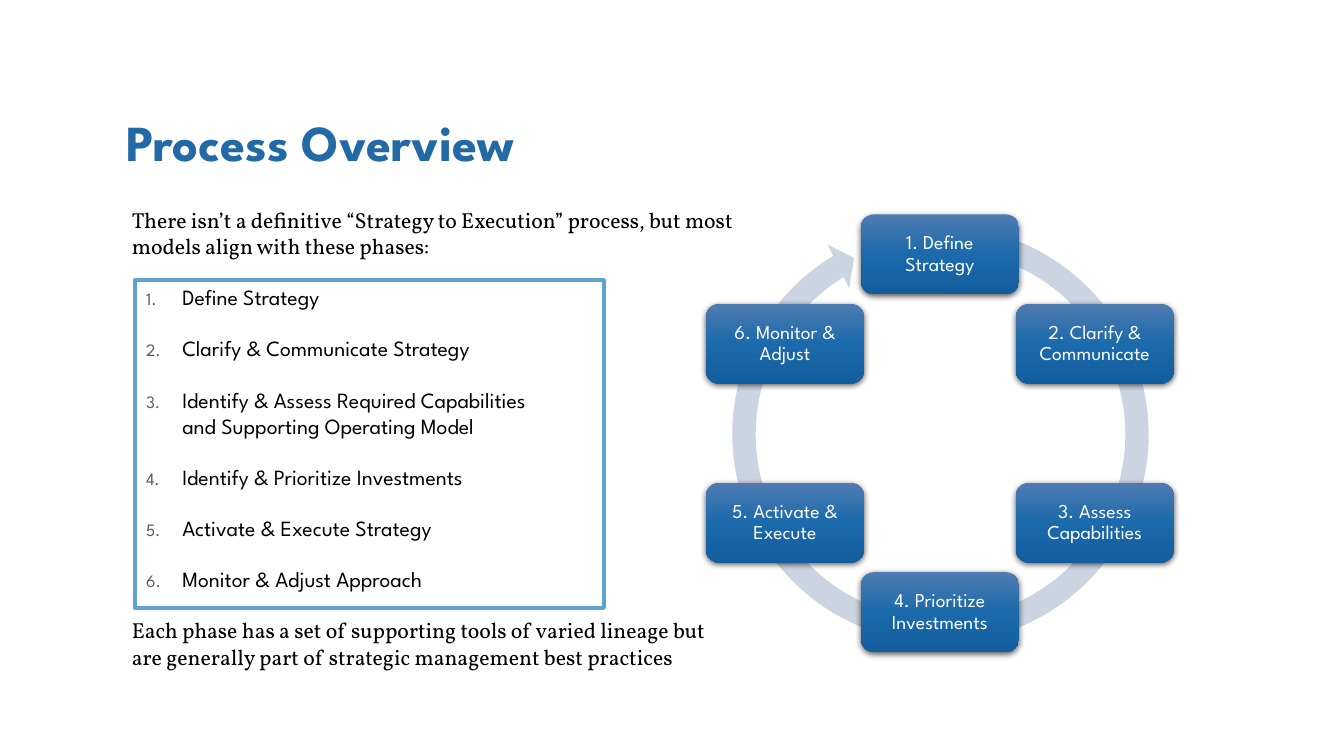
import copy
import math

from lxml import etree
from pptx import Presentation
from pptx.dml.color import RGBColor
from pptx.enum import shapes, text
from pptx.oxml import parse_xml
from pptx.oxml.ns import nsdecls, qn
from pptx.util import Pt

TITLE = "Process Overview"
INTRO = ("There isn’t a definitive “Strategy to Execution” process, "
         "but most models align with these phases:")
PHASES = [
    "Define Strategy",
    "Clarify & Communicate Strategy",
    "Identify & Assess Required Capabilities \nand Supporting Operating Model",
    "Identify & Prioritize Investments",
    "Activate & Execute Strategy",
    "Monitor & Adjust Approach",
]
CLOSING = ("Each phase has a set of supporting tools of varied lineage "
           "but are generally part of strategic management best practices")
CYCLE = ["Define Strategy", "Clarify & Communicate", "Assess Capabilities",
         "Prioritize Investments", "Activate & Execute", "Monitor & Adjust"]

COLORS = {"title": "2269A5", "body": "000000", "number": "595959",
          "frame": "5EA4D1", "ring": "CDD4E1", "step": "FFFFFF"}
STEP_GRADIENT = [(0, "4F7BB1"), (0.5, "1B6AAC"), (1, "135E9E")]
SANS, SERIF = "League Spartan", "Vollkorn"

CENTER_X, CENTER_Y, RADIUS = 671.4, 309.4, 127.8
STEP_W, STEP_H = 113, 57
RING_LEFT, RING_TOP, RING_SIZE = 514.1, 152.6, 315.4
RING_ADJUST = [0.053, 3.126, 143.227, 170.719, 0.055]


def rgb(name):
    return RGBColor.from_string(COLORS[name])


def add_text(paragraph, words, font, size, color, bold=False):
    for i, line in enumerate(words.split("\n")):
        if i:
            paragraph.add_line_break()
        run = paragraph.add_run()
        run.text = line
        run.font.name = font
        run.font.size = Pt(size)
        run.font.bold = bold
        run.font.color.rgb = rgb(color)


def add_box(slide, left, top, width, height):
    frame = slide.shapes.add_textbox(
        Pt(left), Pt(top), Pt(width), Pt(height)).text_frame
    frame.word_wrap = True
    return frame


def indent(paragraph, left, hanging=0):
    props = paragraph._p.get_or_add_pPr()
    props.set("marL", str(Pt(left)))
    props.set("indent", str(-Pt(hanging)))
    return props


def number(props):
    color = etree.SubElement(props, qn("a:buClr"))
    etree.SubElement(color, qn("a:srgbClr"), val=COLORS["number"])
    etree.SubElement(props, qn("a:buSzPct"), val="80000")
    etree.SubElement(props, qn("a:buFont"), typeface=SANS)
    etree.SubElement(props, qn("a:buAutoNum"), type="arabicPeriod")


def add_body(slide):
    frame = add_box(slide, 83.5, 144, 450, 372)
    intro = frame.paragraphs[0]
    indent(intro, 3.6)
    add_text(intro, INTRO, SERIF, 15.5, "body")
    for phase in PHASES:
        item = frame.add_paragraph()
        item.space_before = Pt(18)
        number(indent(item, 39.6, 25.9))
        add_text(item, phase, SANS, 15.5, "body")
    closing = frame.add_paragraph()
    closing.space_before = Pt(18)
    indent(closing, 3.6)
    add_text(closing, CLOSING, SERIF, 15.5, "body")


def shade(step):
    """Give a step its three-stop gradient and soft shadow."""
    step.fill.gradient()
    step.fill.gradient_angle = 270
    stop_list = step._element.spPr.find(".//" + qn("a:gsLst"))
    stop_list.append(copy.deepcopy(stop_list[0]))
    for stop, (position, color) in zip(step.fill.gradient_stops, STEP_GRADIENT):
        stop.position = position
        stop.color.rgb = RGBColor.from_string(color)
    step.line.fill.background()
    step.shadow.inherit = False
    step._element.spPr.find(qn("a:effectLst")).append(parse_xml(
        f'<a:outerShdw {nsdecls("a")} blurRad="{Pt(4.5)}" dist="{Pt(1.5)}" '
        'dir="5400000" rotWithShape="0"><a:srgbClr val="000000">'
        '<a:alpha val="63000"/></a:srgbClr></a:outerShdw>'))


def add_cycle(slide):
    ring = slide.shapes.add_shape(
        shapes.MSO_SHAPE.CIRCULAR_ARROW, Pt(RING_LEFT), Pt(RING_TOP),
        Pt(RING_SIZE), Pt(RING_SIZE))
    for i, value in enumerate(RING_ADJUST):
        ring.adjustments[i] = value
    ring.fill.solid()
    ring.fill.fore_color.rgb = rgb("ring")
    ring.line.fill.background()
    ring.shadow.inherit = False

    for i, label in enumerate(CYCLE):
        angle = math.tau * i / len(CYCLE)
        x = CENTER_X + RADIUS * math.sin(angle) - STEP_W / 2
        y = CENTER_Y - RADIUS * math.cos(angle) - STEP_H / 2
        step = slide.shapes.add_shape(
            shapes.MSO_SHAPE.ROUNDED_RECTANGLE,
            Pt(x), Pt(y), Pt(STEP_W), Pt(STEP_H))
        shade(step)
        frame = step.text_frame
        frame.word_wrap = True
        frame.vertical_anchor = text.MSO_ANCHOR.MIDDLE
        frame.margin_left = frame.margin_right = Pt(7.2)
        frame.margin_top = frame.margin_bottom = Pt(7.2)
        paragraph = frame.paragraphs[0]
        paragraph.alignment = text.PP_ALIGN.CENTER
        paragraph.line_spacing = 0.9
        add_text(paragraph, f"{i + 1}. {label}", SANS, 14, "step")


def main():
    deck = Presentation()
    deck.slide_width, deck.slide_height = Pt(960), Pt(540)
    slide = deck.slides.add_slide(deck.slide_layouts[6])

    heading = add_box(slide, 83.5, 41.8, 684, 84.2)
    heading.vertical_anchor = text.MSO_ANCHOR.BOTTOM
    heading.paragraphs[0].line_spacing = 0.8
    add_text(heading.paragraphs[0], TITLE, SANS, 36, "title", bold=True)

    add_body(slide)
    add_cycle(slide)

    border = slide.shapes.add_shape(
        shapes.MSO_SHAPE.RECTANGLE, Pt(96.5), Pt(200.2), Pt(334.8), Pt(234))
    border.fill.background()
    border.line.color.rgb = rgb("frame")
    border.line.width = Pt(3)
    border.shadow.inherit = False
    deck.save("out.pptx")


if __name__ == "__main__":
    main()
